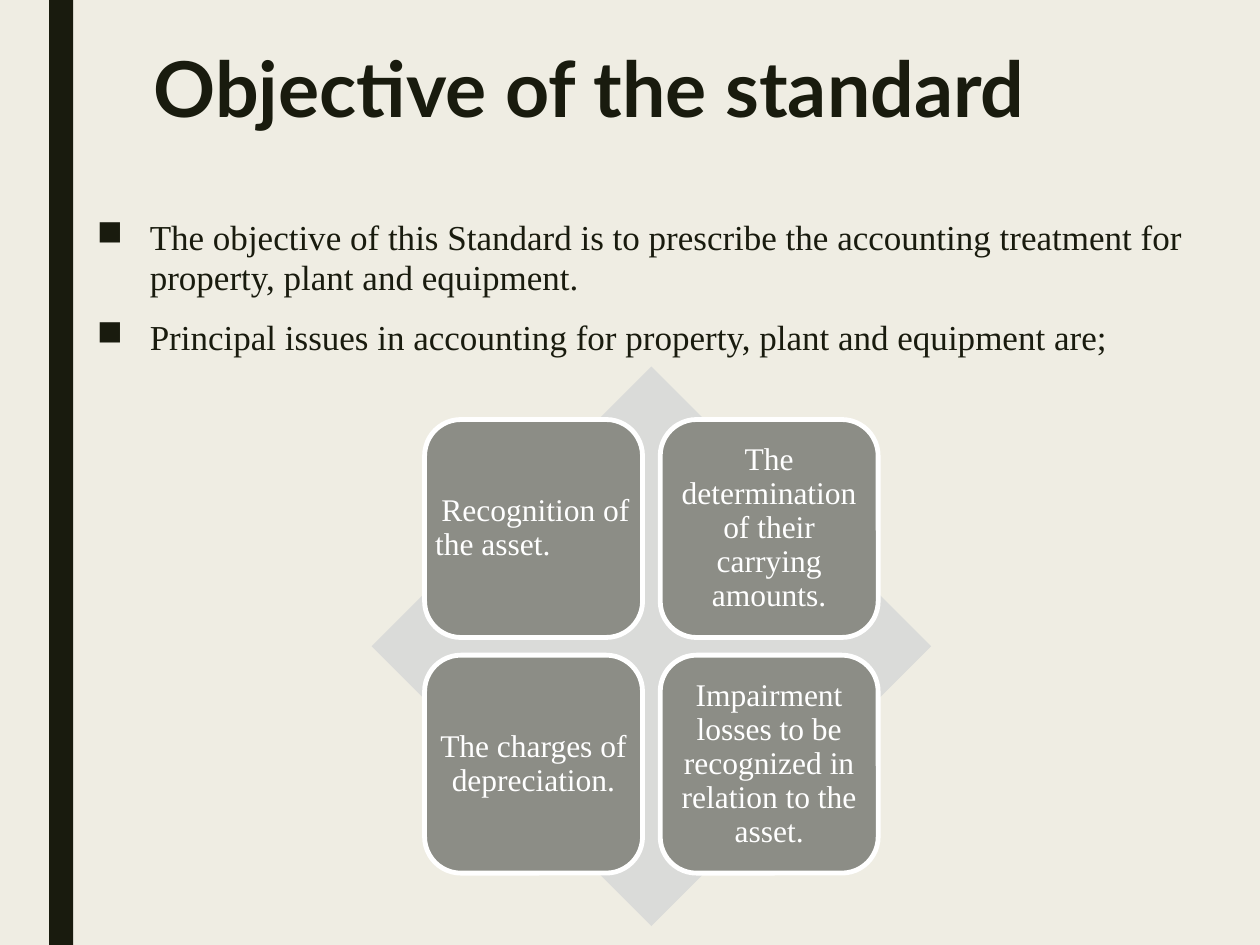
import pptx
import pptx.util
import pptx.dml.color
import pptx.enum.shapes
import pptx.enum.text
import pptx.oxml.ns
import lxml.etree

Inches = pptx.util.Inches
Pt = pptx.util.Pt
Kind = pptx.enum.shapes.MSO_SHAPE
Align = pptx.enum.text.PP_ALIGN
Anchor = pptx.enum.text.MSO_ANCHOR

INK = {"page": "EFEDE3", "dark": "191B0E", "pale": "DADBD9", "card": "8C8D86", "white": "FFFFFF"}
SERIF = "Times New Roman"


def tint(name):
    return pptx.dml.color.RGBColor.from_string(INK[name])


def write(par, text, font=SERIF, size=20, color="dark", bold=False,
          align=Align.LEFT, line=0.9, before=0, after=0, left=0, first=0, mark=None):
    par.alignment = align
    par.line_spacing = line
    par.space_before = Pt(before)
    par.space_after = Pt(after)
    props = par._p.get_or_add_pPr()
    props.set("marL", str(Inches(left)))
    props.set("indent", str(Inches(first)))
    if mark:
        bullet = lxml.etree.SubElement(props, pptx.oxml.ns.qn("a:buChar"))
        bullet.set("char", mark)
    run = par.add_run()
    run.text = text
    run.font.name = font
    run.font.size = Pt(size)
    run.font.bold = bold
    run.font.color.rgb = tint(color)


class Deck:
    def __init__(self, width, height):
        self.show = pptx.Presentation()
        self.show.slide_width = Inches(width)
        self.show.slide_height = Inches(height)
        self.slide = self.show.slides.add_slide(self.show.slide_layouts[5])
        fill = self.slide.background.fill
        fill.solid()
        fill.fore_color.rgb = tint("page")

    def frame(self, shape, anchor, inset):
        frame = shape.text_frame
        frame.word_wrap = True
        frame.auto_size = pptx.enum.text.MSO_AUTO_SIZE.NONE
        frame.vertical_anchor = anchor
        frame.margin_left = frame.margin_right = Inches(inset[0])
        frame.margin_top = frame.margin_bottom = Inches(inset[1])
        return frame

    def title(self, box, text, **style):
        shape = self.slide.shapes.title
        shape.left, shape.top, shape.width, shape.height = map(Inches, box)
        frame = self.frame(shape, Anchor.TOP, (0.1, 0.05))
        write(frame.paragraphs[0], text, **style)

    def list(self, box, items, **style):
        shape = self.slide.shapes.add_textbox(*map(Inches, box))
        frame = self.frame(shape, Anchor.TOP, (0.1, 0.05))
        for i, item in enumerate(items):
            par = frame.add_paragraph() if i else frame.paragraphs[0]
            write(par, item, **style)

    def shape(self, kind, box, color, edge=None):
        shape = self.slide.shapes.add_shape(kind, *map(Inches, box))
        shape.shadow.inherit = False
        shape.fill.solid()
        shape.fill.fore_color.rgb = tint(color)
        if edge:
            shape.line.color.rgb = tint(edge)
            shape.line.width = Pt(2.75)
        else:
            shape.line.fill.background()
        return shape

    def card(self, box, text, **style):
        shape = self.shape(Kind.ROUNDED_RECTANGLE, box, "card", "white")
        frame = self.frame(shape, Anchor.MIDDLE, (0, 0))
        write(frame.paragraphs[0], text, size=18, color="white", **style)


def main():
    deck = Deck(10, 7.5)
    deck.shape(Kind.RECTANGLE, (0.39, 0, 0.19, 7.5), "dark")
    deck.title((1.12, 0.36, 7.88, 1.04), "Objective of the standard",
               font="Lato", size=44, bold=True, line=0.89)
    deck.list((0.67, 1.69, 8.91, 4.83), [
        "The objective of this Standard is to prescribe the accounting treatment for property, plant and equipment.",
        "Principal issues in accounting for property, plant and equipment are;",
    ], line=0.94, before=10, after=2, left=0.42, first=-0.42, mark="■")

    deck.shape(Kind.DIAMOND, (2.95, 2.91, 4.44, 4.44), "pale")
    mid = {"align": Align.CENTER}
    cards = [
        ("Recognition of the asset.", {"first": 0.05}),
        ("The determination of their carrying amounts.", mid),
        ("The charges of depreciation.", mid),
        ("Impairment losses to be recognized in relation to the asset.", mid),
    ]
    side, step = 1.73, 1.87
    for i, (text, style) in enumerate(cards):
        row, col = divmod(i, 2)
        deck.card((3.37 + col * step, 3.33 + row * step, side, side), text, **style)

    deck.show.save("out.pptx")


if __name__ == "__main__":
    main()
